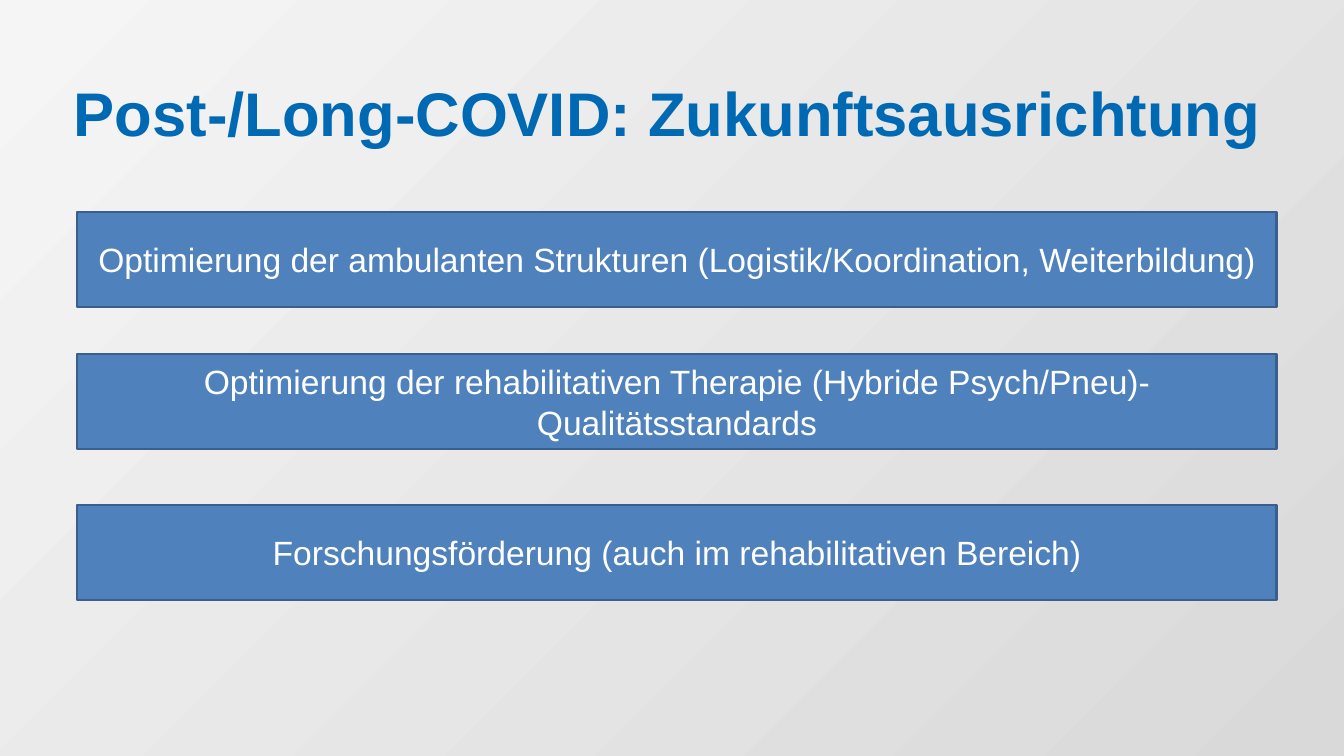
import pptx
import pptx.util
import pptx.dml.color
import pptx.enum.shapes
import pptx.enum.text

PX = 12192000 / 1344
HUES = {
    "light": "F5F5F5",
    "dark": "D9D9D9",
    "box": "4F81BD",
    "edge": "3A5F8C",
    "title": "0069B4",
    "text": "FFFFFF",
}


def px(*nums):
    return [pptx.util.Emu(round(num * PX)) for num in nums]


def write(shape, words, size, hue, align, bold=False):
    frame = shape.text_frame
    frame.word_wrap = True
    frame.vertical_anchor = pptx.enum.text.MSO_ANCHOR.MIDDLE
    para = frame.paragraphs[0]
    para.alignment = align
    run = para.add_run()
    run.text = words
    run.font.name = "Arial"
    run.font.size = pptx.util.Pt(size)
    run.font.bold = bold
    run.font.color.rgb = pptx.dml.color.RGBColor.from_string(HUES[hue])


deck = pptx.Presentation()
deck.slide_width, deck.slide_height = px(1344, 756)
slide = deck.slides.add_slide(deck.slide_layouts[6])

back = slide.background.fill
back.gradient()
back.gradient_angle = 315
for stop, spot, hue in zip(back.gradient_stops, (0, 1), ("light", "dark")):
    stop.position = spot
    stop.color.rgb = pptx.dml.color.RGBColor.from_string(HUES[hue])

goals = [
    (212, "Optimierung der ambulanten Strukturen (Logistik/Koordination, Weiterbildung)"),
    (354, "Optimierung der rehabilitativen Therapie (Hybride Psych/Pneu)-Qualitätsstandards"),
    (505, "Forschungsförderung (auch im rehabilitativen Bereich)"),
]
for top, words in goals:
    box = slide.shapes.add_shape(
        pptx.enum.shapes.MSO_SHAPE.RECTANGLE, *px(77, top, 1200, 95))
    box.shadow.inherit = False
    box.fill.solid()
    box.fill.fore_color.rgb = pptx.dml.color.RGBColor.from_string(HUES["box"])
    box.line.color.rgb = pptx.dml.color.RGBColor.from_string(HUES["edge"])
    box.line.width = pptx.util.Pt(2)
    write(box, words, 24, "text", pptx.enum.text.PP_ALIGN.CENTER)

title = slide.shapes.add_textbox(*px(64, 60, 1280, 104))
write(title, "Post-/Long-COVID: Zukunftsausrichtung", 44, "title",
      pptx.enum.text.PP_ALIGN.LEFT, True)

deck.save("out.pptx")
